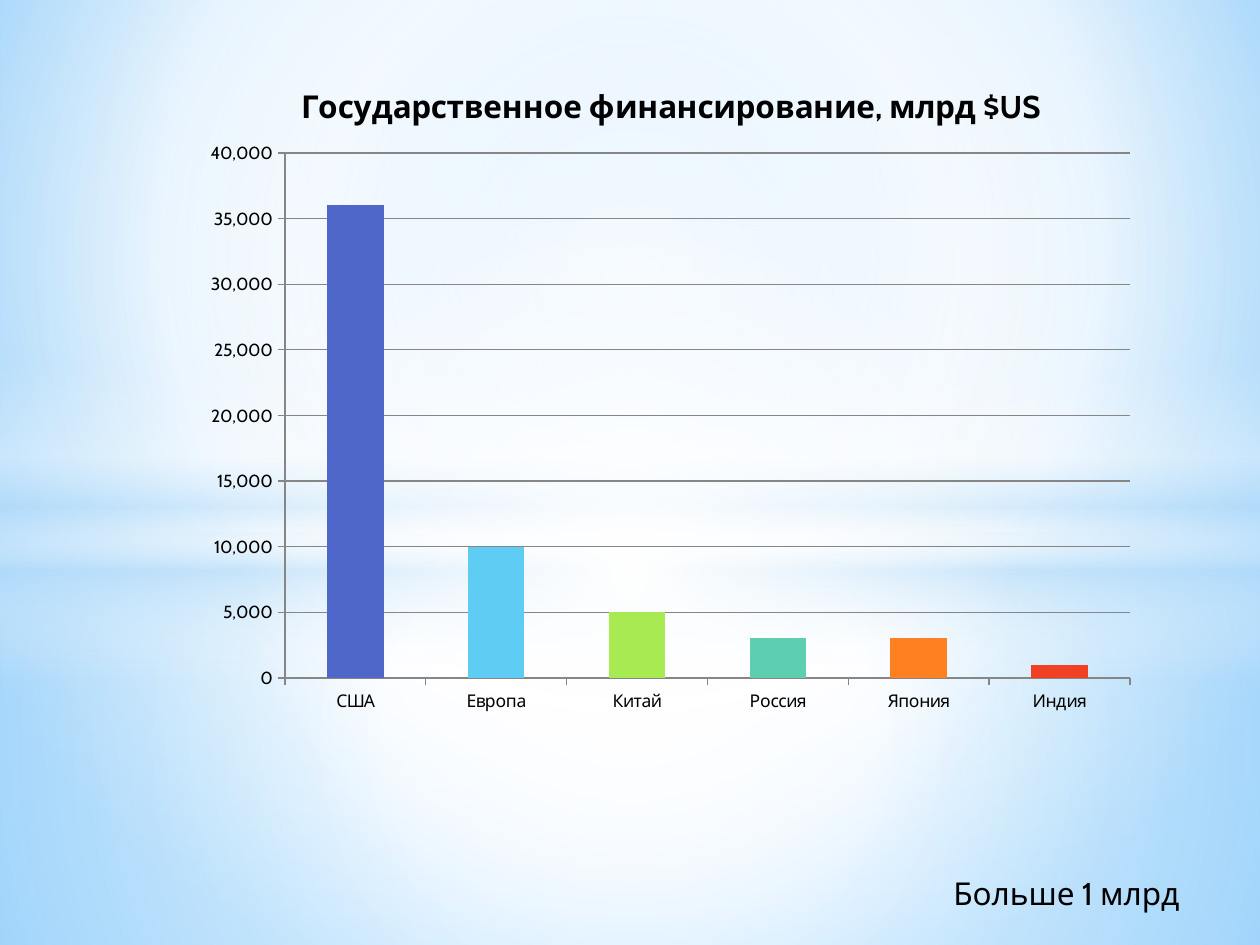
from lxml.etree import SubElement
from pptx import Presentation
from pptx.chart.data import CategoryChartData
from pptx.dml.color import RGBColor
from pptx.enum.chart import XL_CHART_TYPE, XL_TICK_MARK
from pptx.enum.shapes import MSO_SHAPE
from pptx.enum.text import MSO_AUTO_SIZE
from pptx.oxml.ns import qn
from pptx.util import Inches, Pt

HUES = {
    "text": "000000", "line": "868686", "white": "FFFFFF",
    "sky": "9ED5FF", "deep": "5BB9FF", "pale": "B4DCFA",
    "blue": "4E67C8", "cyan": "5ECCF3", "lime": "A7EA52",
    "teal": "5DCEAF", "orange": "FF8021", "red": "F14124",
}
FONT = "Cabin"
MID = (50, 50, 50, 50)


def px(num):
    return round(num * Inches(1) / 126)


class Deck:
    def __init__(self, wide, high):
        self.prs = Presentation()
        self.prs.slide_width, self.prs.slide_height = px(wide), px(high)
        self.slide = self.prs.slides.add_slide(self.prs.slide_layouts[6])

    def style(self, font, size, bold=False):
        font.name, font.size, font.bold = FONT, Pt(size), bold
        font.color.rgb = RGBColor.from_string(HUES["text"])

    def blend(self, fill, root, stops, rect=None):
        """Stops are (percent, hue, opacity); without rect the blend runs down."""
        fill.gradient()
        grad = root.find(".//" + qn("a:gradFill"))
        for kid in list(grad):
            grad.remove(kid)
        group = SubElement(grad, qn("a:gsLst"))
        for pos, hue, alpha in stops:
            stop = SubElement(group, qn("a:gs"), pos=str(pos * 1000))
            color = SubElement(stop, qn("a:srgbClr"), val=HUES[hue])
            if alpha < 100:
                SubElement(color, qn("a:alpha"), val=str(alpha * 1000))
        if rect:
            way = SubElement(grad, qn("a:path"), path="circle")
            sides = {k: str(v * 1000) for k, v in zip("ltrb", rect)}
            SubElement(way, qn("a:fillToRect"), **sides)
        else:
            SubElement(grad, qn("a:lin"), ang="5400000", scaled="0")

    def back(self, stops, rect):
        self.blend(self.slide.background.fill, self.slide.element, stops, rect)

    def glow(self, kind, box, stops, rect=None):
        shape = self.slide.shapes.add_shape(kind, *map(px, box))
        shape.shadow.inherit = False
        shape.line.fill.background()
        self.blend(shape.fill, shape.element, stops, rect)

    def place(self, chart, box, area):
        """Fix the inner plot area, given in slide px, within the chart box."""
        plot = chart.element.find(".//" + qn("c:plotArea"))
        old = plot.find(qn("c:layout"))
        if old is not None:
            plot.remove(old)
        outer = SubElement(plot, qn("c:layout"))
        plot.insert(0, outer)
        inner = SubElement(outer, qn("c:manualLayout"))
        left, top, wide, high = box
        parts = {
            "layoutTarget": "inner", "xMode": "edge", "yMode": "edge",
            "x": (area[0] - left) / wide, "y": (area[1] - top) / high,
            "w": area[2] / wide, "h": area[3] / high,
        }
        for name, val in parts.items():
            SubElement(inner, qn("c:" + name), val=str(val))

    def chart(self, box, area, title, rows):
        data = CategoryChartData(number_format="#,##0")
        data.categories = [name for name, _, _ in rows]
        data.add_series("Series 1", [val for _, val, _ in rows])
        chart = self.slide.shapes.add_chart(
            XL_CHART_TYPE.COLUMN_CLUSTERED, *map(px, box), data).chart
        self.style(chart.font, 10)
        chart.has_legend = False
        self.place(chart, box, area)

        # Title
        chart.has_title = True
        frame = chart.chart_title.text_frame
        frame.text = title
        self.style(frame.paragraphs[0].runs[0].font, 18, True)
        chart.chart_title.include_in_layout = False

        # Axes
        line = RGBColor.from_string(HUES["line"])
        for axis in (chart.category_axis, chart.value_axis):
            axis.major_tick_mark = XL_TICK_MARK.OUTSIDE
            axis.minor_tick_mark = XL_TICK_MARK.NONE
            axis.format.line.color.rgb = line
        axis = chart.value_axis
        axis.minimum_scale, axis.maximum_scale = 0, 40000
        axis.major_unit = 5000
        axis.has_major_gridlines = True
        axis.major_gridlines.format.line.color.rgb = line
        axis.tick_labels.number_format = "#,##0"
        axis.tick_labels.number_format_is_linked = False

        # Columns
        plot = chart.plots[0]
        plot.gap_width = 150
        plot.vary_by_categories = True
        for num, (_, _, hue) in enumerate(rows):
            fill = plot.series[0].points[num].format.fill
            fill.solid()
            fill.fore_color.rgb = RGBColor.from_string(HUES[hue])

    def text(self, box, words, size):
        frame = self.slide.shapes.add_textbox(*map(px, box)).text_frame
        frame.word_wrap = True
        frame.auto_size = MSO_AUTO_SIZE.SHAPE_TO_FIT_TEXT
        frame.text = words
        self.style(frame.paragraphs[0].runs[0].font, size)


def main():
    deck = Deck(1260, 945)

    # Background light
    deck.back([(0, "sky", 100), (60, "white", 100), (100, "deep", 100)],
              (20, 10, 20, 60))
    deck.glow(MSO_SHAPE.RECTANGLE, (0, 533, 1260, 412),
              [(0, "white", 91), (37, "white", 76), (100, "pale", 79)], MID)
    deck.glow(MSO_SHAPE.RECTANGLE, (0, 0, 1260, 533),
              [(0, "white", 89), (48, "white", 62), (100, "pale", 79)], MID)
    deck.glow(MSO_SHAPE.RECTANGLE, (0, 365, 1260, 315),
              [(0, "white", 0), (29, "white", 30), (45, "pale", 40),
               (55, "white", 26), (65, "pale", 60), (100, "white", 0)])
    deck.glow(MSO_SHAPE.OVAL, (0, 220, 1260, 703),
              [(0, "white", 100), (54, "white", 0)], MID)

    # Funding by country
    deck.chart((192, 59, 958, 665), (285, 153, 845, 525),
               "Государственное финансирование, млрд $US", [
        ("США", 36000, "blue"), ("Европа", 10000, "cyan"),
        ("Китай", 5000, "lime"), ("Россия", 3000, "teal"),
        ("Япония", 3000, "orange"), ("Индия", 1000, "red"),
    ])

    # Note
    deck.text((941, 868, 291, 50), "Больше 1 млрд", 18)
    deck.prs.save("out.pptx")


if __name__ == "__main__":
    main()
